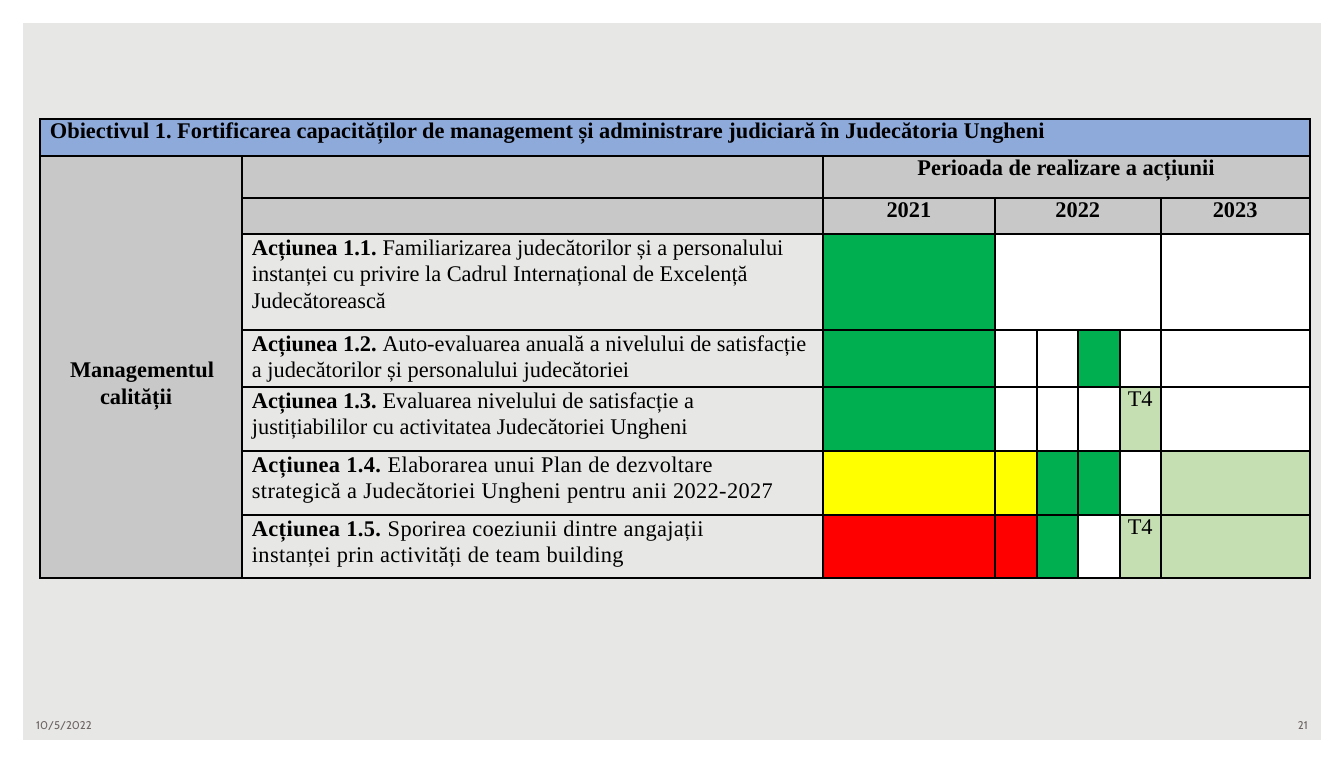
from itertools import product

from lxml.etree import SubElement
from pptx import Presentation
from pptx.dml.color import RGBColor
from pptx.enum.shapes import MSO_SHAPE
from pptx.enum.text import MSO_ANCHOR, PP_ALIGN
from pptx.oxml.ns import qn
from pptx.util import Emu, Pt

EMU_PER_PX = 914400 / 134.4
COLORS = {
    "background": "E7E7E5", "white": "FFFFFF", "black": "000000",
    "footer": "6C6463", "title": "8EAADB", "header": "C8C8C8",
    "done": "00B050", "partial": "FFFF00", "missed": "FF0000",
    "planned": "C5DFB3",
}
COLUMN_WIDTHS = [202, 581, 172, 42, 41, 42, 41, 149]
ROW_HEIGHTS = [37, 42, 36, 96, 57, 64, 64, 63]
MERGES = [(0, 0, 0, 7), (1, 0, 7, 0), (1, 2, 1, 7), (2, 3, 2, 6), (3, 3, 3, 6)]
HEADINGS = {(1, 2): "Perioada de realizare a acțiunii",
            (2, 2): "2021", (2, 3): "2022", (2, 7): "2023"}

# Label, description, right margin, letter spacing, colours of 2021, T1 to T4 of 2022, 2023
ACTIONS = [
    ("Acțiunea 1.1. ", "Familiarizarea judecătorilor și a personalului instanței cu privire "
     "la Cadrul Internațional de Excelență Judecătorească", 12, 0,
     "done white white white white white"),
    ("Acțiunea 1.2. ", "Auto-evaluarea anuală a nivelului de satisfacție a judecătorilor "
     "și personalului judecătoriei", 12, 0,
     "done white white done white white"),
    ("Acțiunea 1.3. ", "Evaluarea nivelului de satisfacție a justițiabililor cu activitatea "
     "Judecătoriei Ungheni", 12, 0,
     "done white white white planned white"),
    ("Acțiunea 1.4. ", "Elaborarea unui Plan de dezvoltare strategică a Judecătoriei Ungheni "
     "pentru anii 2022-2027", 20, 20,
     "partial partial done done white planned"),
    ("Acțiunea 1.5. ", "Sporirea coeziunii dintre angajații instanței prin activități de "
     "team building", 40, 20,
     "missed missed done white planned planned"),
]


def px(length):
    return Emu(round(length * EMU_PER_PX))


def color(name):
    return RGBColor.from_string(COLORS[name])


def write(paragraph, text, *, size=12, font="Times New Roman", fill="black", bold=False,
          align=PP_ALIGN.LEFT, line_spacing=None, space_after=None, tracking=0):
    paragraph.alignment = align
    if line_spacing:
        paragraph.line_spacing = line_spacing
    if space_after:
        paragraph.space_after = Pt(space_after)
    run = paragraph.add_run()
    run.text = text
    run.font.size = Pt(size)
    run.font.name = font
    run.font.bold = bold
    run.font.color.rgb = color(fill)
    if tracking:
        run.font._element.set("spc", str(tracking))


def indent(paragraph, left, first_line=0):
    properties = paragraph._p.get_or_add_pPr()
    properties.set("marL", str(px(left)))
    properties.set("indent", str(px(first_line)))


class SlideBuilder:
    def __init__(self, presentation):
        self.slide = presentation.slides.add_slide(presentation.slide_layouts[6])
        background = self.slide.background.fill
        background.solid()
        background.fore_color.rgb = color("background")

    def frame(self, width, height):
        shape = self.slide.shapes.add_shape(MSO_SHAPE.FRAME, 0, 0, px(width), px(height))
        shape.adjustments[0] = 0.03
        shape.shadow.inherit = False
        shape.fill.solid()
        shape.fill.fore_color.rgb = color("white")
        shape.line.fill.background()

    def footer(self, left, text, align):
        box = self.slide.shapes.add_textbox(px(left), px(712), px(313), px(27))
        box.text_frame.word_wrap = True
        box.text_frame.vertical_anchor = MSO_ANCHOR.MIDDLE
        write(box.text_frame.paragraphs[0], text, size=6, font="Cabin", fill="footer",
              align=align, space_after=6)

    def table(self, left, top):
        """Add the bordered grid, with its merges and no text."""
        table = self.slide.shapes.add_table(
            len(ROW_HEIGHTS), len(COLUMN_WIDTHS), px(left), px(top),
            px(sum(COLUMN_WIDTHS)), px(sum(ROW_HEIGHTS))).table
        table.first_row = table.horz_banding = False
        for column, width in zip(table.columns, COLUMN_WIDTHS):
            column.width = px(width)
        for row, height in zip(table.rows, ROW_HEIGHTS):
            row.height = px(height)
        for row, column in product(range(len(ROW_HEIGHTS)), range(len(COLUMN_WIDTHS))):
            self.prepare_cell(table.cell(row, column))
        for top_row, left_column, bottom_row, right_column in MERGES:
            table.cell(top_row, left_column).merge(table.cell(bottom_row, right_column))
        return table

    def prepare_cell(self, cell):
        """Clear margins and fill, draw black borders and size the empty paragraph."""
        cell.margin_left = cell.margin_right = cell.margin_top = cell.margin_bottom = 0
        properties = cell._tc.get_or_add_tcPr()
        for side in ("lnL", "lnR", "lnT", "lnB"):
            line = SubElement(properties, qn(f"a:{side}"), w=str(Pt(1)))
            solid = SubElement(line, qn("a:solidFill"))
            SubElement(solid, qn("a:srgbClr"), val=COLORS["black"])
        cell.fill.background()
        SubElement(cell.text_frame.paragraphs[0]._p, qn("a:endParaRPr"), sz="1200")

    def fill_cell(self, cell, name):
        cell.fill.solid()
        cell.fill.fore_color.rgb = color(name)

    def headings(self, table):
        title = table.cell(0, 0)
        self.fill_cell(title, "title")
        title.margin_left = px(10)
        write(title.text_frame.paragraphs[0], "Obiectivul 1. Fortificarea capacităților de "
              "management și administrare judiciară în Judecătoria Ungheni", bold=True)
        for row, column in product((1, 2), range(1, len(COLUMN_WIDTHS))):
            self.fill_cell(table.cell(row, column), "header")
        for position, text in HEADINGS.items():
            write(table.cell(*position).text_frame.paragraphs[0], text, bold=True,
                  align=PP_ALIGN.CENTER)
        area = table.cell(1, 0)
        self.fill_cell(area, "header")
        area.vertical_anchor = MSO_ANCHOR.MIDDLE
        area.margin_top = px(32)
        paragraph = area.text_frame.paragraphs[0]
        write(paragraph, "Managementul calității", bold=True, line_spacing=1.08)
        indent(paragraph, 60, -30)

    def action(self, table, row, label, description, right_margin, tracking, statuses):
        cell = table.cell(row, 1)
        cell.margin_left = px(10)
        cell.margin_right = px(right_margin)
        paragraph = cell.text_frame.paragraphs[0]
        write(paragraph, label, bold=True, line_spacing=1.06, tracking=tracking)
        write(paragraph, description, line_spacing=1.06, tracking=tracking)
        for column, status in enumerate(statuses.split(), start=2):
            cell = table.cell(row, column)
            self.fill_cell(cell, status)
            if column == 6 and status == "planned":
                write(cell.text_frame.paragraphs[0], "T4", align=PP_ALIGN.CENTER)


def main():
    presentation = Presentation()
    presentation.slide_width, presentation.slide_height = px(1344), px(762)
    builder = SlideBuilder(presentation)
    builder.frame(1344, 763)
    builder.footer(23, "10/5/2022", PP_ALIGN.LEFT)
    builder.footer(1008, "21", PP_ALIGN.RIGHT)
    table = builder.table(40, 119)
    builder.headings(table)
    for row, action in enumerate(ACTIONS, start=3):
        builder.action(table, row, *action)
    presentation.save("out.pptx")


if __name__ == "__main__":
    main()
